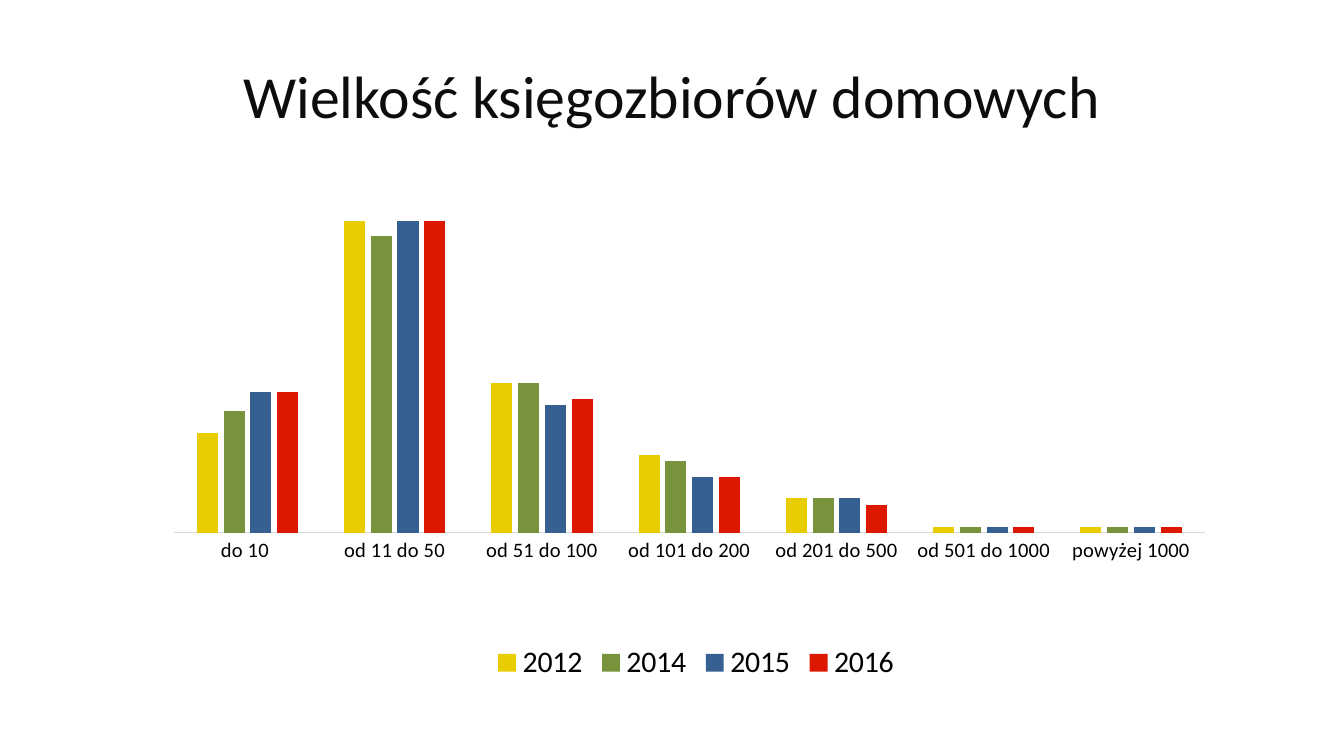
from lxml.etree import SubElement
from pptx import Presentation
from pptx.chart.data import CategoryChartData
from pptx.dml.color import RGBColor
from pptx.enum.chart import XL_CHART_TYPE as ChartType, XL_LEGEND_POSITION as LegendPosition
from pptx.enum.chart import XL_TICK_LABEL_POSITION as LabelPosition, XL_TICK_MARK as TickMark
from pptx.enum.text import MSO_AUTO_SIZE as AutoSize, PP_ALIGN as Align
from pptx.oxml.ns import qn
from pptx.util import Pt

SCALE = 914400 / 134.4
FONT = "Calibri"
COLORS = {"title": "0D0D0D", "text": "000000", "axis": "D9D9D9",
          "2012": "E8CD02", "2014": "77933C", "2015": "376092", "2016": "DC1900"}
CATEGORIES = ["do 10 ", "od 11 do 50", "od 51 do 100", "od 101 do 200",
              "od 201 do 500", "od 501 do 1000", "powyżej 1000"]
SERIES = {"2012": [32, 100, 48, 25, 11, 2, 2],
          "2014": [39, 95, 48, 23, 11, 2, 2],
          "2015": [45, 100, 41, 18, 11, 2, 2],
          "2016": [45, 100, 43, 18, 9, 2, 2]}
PLOT_LAYOUT = {"layoutTarget": "inner", "xMode": "edge", "yMode": "edge",
               "x": 0.037, "y": 0.049, "w": 0.914, "h": 0.663}


def px(value):
    """Turn pixels into EMU."""
    return round(value * SCALE)


def set_all(target, **values):
    """Set each named attribute on the target."""
    for name, value in values.items():
        setattr(target, name, value)


def set_font(font, size, color):
    """Apply the slide typeface with a size and a named colour."""
    set_all(font, name=FONT, size=Pt(size), bold=False)
    font.color.rgb = RGBColor.from_string(COLORS[color])


def add_title(slide, box, text):
    """Place the centred one-line heading in the box."""
    frame = slide.shapes.add_textbox(*map(px, box)).text_frame
    set_all(frame, word_wrap=False, auto_size=AutoSize.SHAPE_TO_FIT_TEXT)
    paragraph = frame.paragraphs[0]
    set_all(paragraph, text=text, alignment=Align.CENTER)
    set_font(paragraph.runs[0].font, 32, "title")


def set_plot_layout(chart):
    """Fix the inner plot area as fractions of the chart."""
    plot_area = chart.plots[0]._element.getparent()
    layout = plot_area.find(qn("c:layout"))
    if layout is None:
        layout = plot_area.makeelement(qn("c:layout"))
        plot_area.insert(0, layout)
    manual = SubElement(layout, qn("c:manualLayout"))
    for name, value in PLOT_LAYOUT.items():
        SubElement(manual, qn(f"c:{name}")).set("val", str(value))


def add_collection_chart(slide, box):
    """Place the clustered columns with their legend in the box."""
    data = CategoryChartData(number_format="0%")
    data.categories = CATEGORIES
    for name, values in SERIES.items():
        data.add_series(name, values)
    chart = slide.shapes.add_chart(ChartType.COLUMN_CLUSTERED, *map(px, box), data).chart
    set_all(chart, has_title=False, has_legend=True)
    set_font(chart.font, 10, "text")
    set_all(chart.legend, position=LegendPosition.BOTTOM, include_in_layout=False)
    set_font(chart.legend.font, 16, "text")

    plot = chart.plots[0]
    set_all(plot, gap_width=219, overlap=-27, vary_by_categories=False)
    for series in plot.series:
        series.format.fill.solid()
        series.format.fill.fore_color.rgb = RGBColor.from_string(COLORS[series.name])

    ticks = {"major_tick_mark": TickMark.NONE, "minor_tick_mark": TickMark.NONE}
    category_axis, value_axis = chart.category_axis, chart.value_axis
    set_all(category_axis, has_major_gridlines=False, **ticks)
    set_font(category_axis.tick_labels.font, 11, "text")
    category_axis.format.line.width = Pt(0.75)
    category_axis.format.line.color.rgb = RGBColor.from_string(COLORS["axis"])
    set_all(value_axis, has_major_gridlines=False, minimum_scale=0, maximum_scale=113.64,
            tick_label_position=LabelPosition.NONE, **ticks)
    set_all(value_axis.tick_labels, number_format="0%", number_format_is_linked=False)
    value_axis.format.line.fill.background()
    set_plot_layout(chart)


def main():
    """Build and save the slide."""
    presentation = Presentation()
    set_all(presentation, slide_width=px(1344), slide_height=px(756))
    slide = presentation.slides.add_slide(presentation.slide_layouts[6])
    add_title(slide, (226, 52, 892, 86), "Wielkość księgozbiorów domowych")
    add_collection_chart(slide, (132, 152, 1128, 535))
    presentation.save("out.pptx")


if __name__ == "__main__":
    main()
